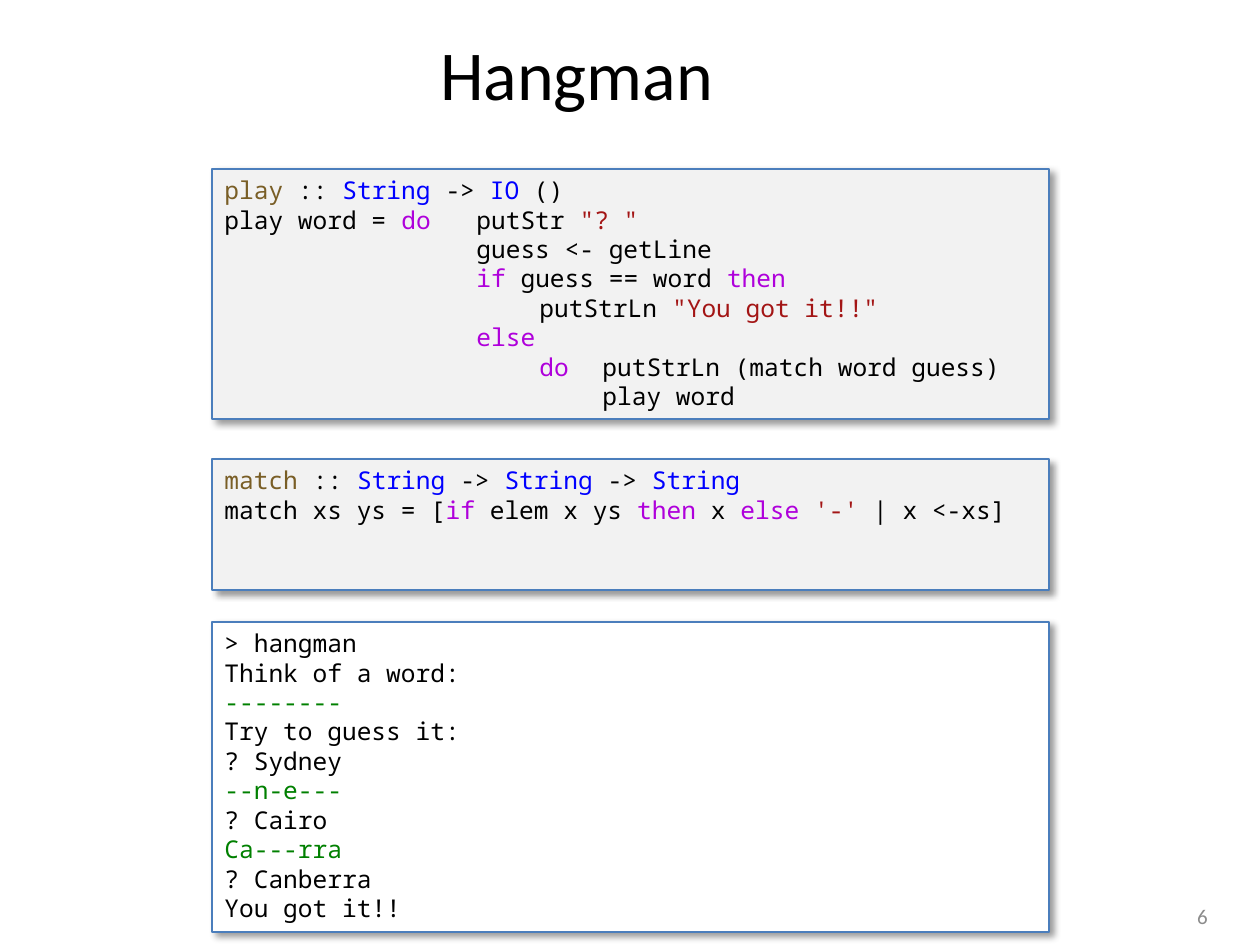
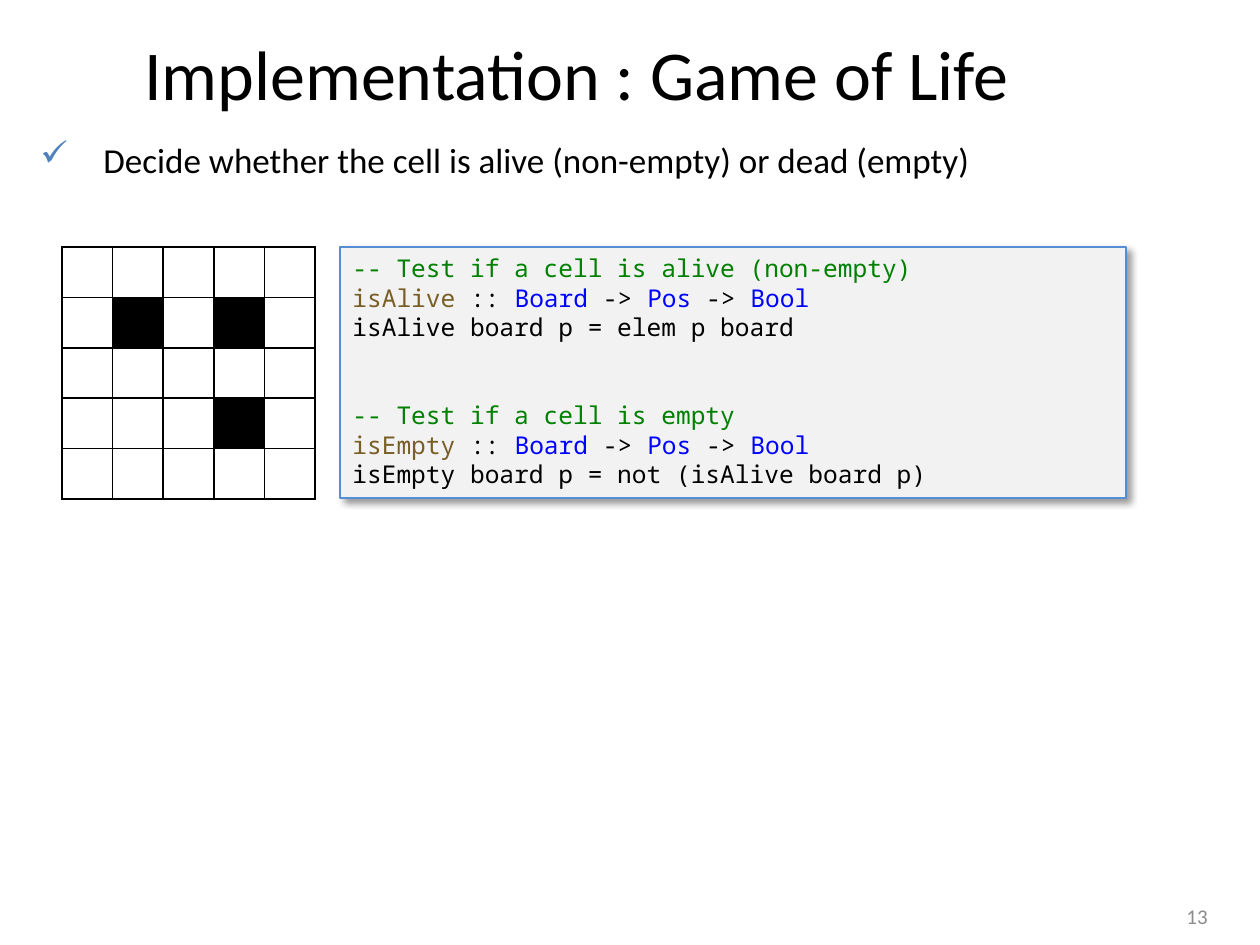
from lxml import etree
from pptx import Presentation
from pptx.dml.color import RGBColor
from pptx.enum.shapes import MSO_SHAPE
from pptx.enum.text import MSO_ANCHOR, PP_ALIGN
from pptx.oxml import parse_xml
from pptx.oxml.ns import qn
from pptx.util import Pt

RECTANGLE = MSO_SHAPE.RECTANGLE
TOP, MIDDLE = MSO_ANCHOR.TOP, MSO_ANCHOR.MIDDLE
LEFT, CENTER, RIGHT = PP_ALIGN.LEFT, PP_ALIGN.CENTER, PP_ALIGN.RIGHT
NAMESPACE = 'xmlns:a="http://schemas.openxmlformats.org/drawingml/2006/main"'

# Look shared by the slides; lengths are px, 126 to the inch
SCALE = 914400 / 126
PAGE_SIZE = (1260, 945)
TITLE_AREA = (28, 34, 1097, 77)
BODY_AREA = (28, 132, 1192, 724)
NUMBER_AREA = (926, 891, 294, 50)
TAB_STEP, TAB_COUNT = 63, 6
BULLET_INDENT = 63
TEXT_FONT, CODE_FONT = "Calibri", "Noto Sans Mono"
CODE_SIZE, CODE_LEADING = 14, 16.8
BLACK, WHITE, PANEL = "000000", "FFFFFF", "F2F2F2"
NUMBER_GREY, BULLET_BLUE = "8C8C8C", "4F81BD"
FRAME_BLUE, FRAME_LIGHT = "4B7EBC", "558ED5"

# Syntax colours
PLAIN, NAME, TYPE = BLACK, "795E26", "0000FF"
KEYWORD, STRING, GREEN = "AF00DB", "A31515", "008000"


def signature(name, *types):
    """Coloured spans of a Haskell type signature."""
    spans = [(name, NAME), (" :: ", PLAIN)]
    for index, type_name in enumerate(types):
        if index:
            spans.append((" -> ", PLAIN))
        spans.append((type_name, TYPE))
    return spans


PLAY_CODE = [
    signature("play", "String", "IO") + [(" ()", PLAIN)],
    [("play word = ", PLAIN), ("do\t", KEYWORD), ("putStr ", PLAIN), ('"? "', STRING)],
    [("\t\t\t\tguess <- getLine", PLAIN)],
    [("\t\t\t\tif", KEYWORD), (" guess == word ", PLAIN), ("then", KEYWORD)],
    [("\t\t\t\t\tputStrLn ", PLAIN), ('"You got it!!"', STRING)],
    [("\t\t\t\telse", KEYWORD)],
    [("\t\t\t\t\tdo\t", KEYWORD), ("putStrLn (match word guess)", PLAIN)],
    [("\t\t\t\t\t\tplay word", PLAIN)],
]
MATCH_CODE = [
    signature("match", "String", "String", "String"),
    [("match xs ys = [", PLAIN), ("if ", KEYWORD), ("elem x ys ", PLAIN),
     ("then", KEYWORD), (" x ", PLAIN), ("else ", KEYWORD), ("'-'", STRING),
     (" | x <-xs]", PLAIN)],
]
SESSION = [
    [("> hangman", PLAIN)],
    [("Think of a word:", PLAIN)],
    [("--------", GREEN)],
    [("Try to guess it:", PLAIN)],
    [("? Sydney", PLAIN)],
    [("--n-e---", GREEN)],
    [("? Cairo", PLAIN)],
    [("Ca---rra", GREEN)],
    [("? Canberra", PLAIN)],
    [("You got it!!", PLAIN)],
]
CELL_CODE = [
    [("-- Test if a cell is alive (non-empty)", GREEN)],
    signature("isAlive", "Board", "Pos", "Bool"),
    [("isAlive board p = elem p board", PLAIN)],
    [("-- Test if a cell is empty", GREEN)],
    signature("isEmpty", "Board", "Pos", "Bool"),
    [("isEmpty board p = not (isAlive board p)", PLAIN)],
]
SECOND_FUNCTION_LINE = 3

HANGMAN_LEFT, HANGMAN_WIDTH = 212, 837
HANGMAN_PANELS = [  # top, height, fill, lines
    (169, 250, PANEL, PLAY_CODE),
    (459, 131, PANEL, MATCH_CODE),
    (622, 310, WHITE, SESSION),
]
CELL_CODE_AREA = (340, 247, 786, 251)

CELL_RULE = "Decide whether the cell is alive (non-empty) or dead (empty)"
BOARD_AREA = (62, 247, 253, 252)
BOARD_SIZE = 5
ALIVE = {(1, 1), (1, 3), (3, 3)}  # row, column


def emu(px):
    return round(px * SCALE)


def place(area):
    return [emu(length) for length in area]


def color(value):
    return RGBColor.from_string(value)


def add_span(para, text, font, size, shade):
    span = para.add_run()
    span.text = text
    span.font.name = font
    span.font.size = Pt(size)
    span.font.color.rgb = color(shade)


def add_text(page, area, text, size, shade, align, anchor):
    box = page.shapes.add_textbox(*place(area))
    box.text_frame.word_wrap = True
    box.text_frame.vertical_anchor = anchor
    para = box.text_frame.paragraphs[0]
    para.alignment = align
    add_span(para, text, TEXT_FONT, size, shade)
    return para


def add_page(deck, title, number):
    page = deck.slides.add_slide(deck.slide_layouts[6])
    add_text(page, TITLE_AREA, title, 40, BLACK, CENTER, MIDDLE)
    add_text(page, NUMBER_AREA, number, 12, NUMBER_GREY, RIGHT, MIDDLE)
    return page


def add_bullet(para):
    properties = para._p.get_or_add_pPr()
    properties.set("marL", str(emu(BULLET_INDENT)))
    properties.set("indent", str(-emu(BULLET_INDENT)))
    bullet_color = etree.SubElement(properties, qn("a:buClr"))
    etree.SubElement(bullet_color, qn("a:srgbClr"), val=BULLET_BLUE)
    etree.SubElement(properties, qn("a:buChar"), char="✓")


def add_tabs(para):
    tabs = etree.SubElement(para._p.get_or_add_pPr(), qn("a:tabLst"))
    for stop in range(1, TAB_COUNT + 1):
        etree.SubElement(tabs, qn("a:tab"), pos=str(emu(stop * TAB_STEP)), algn="l")


def add_shadow(shape):
    shape._element.spPr.append(parse_xml(
        f'<a:effectLst {NAMESPACE}><a:outerShdw blurRad="{Pt(4)}" dist="{Pt(3)}" '
        'dir="2700000" algn="tl" rotWithShape="0"><a:srgbClr val="000000">'
        '<a:alpha val="40000"/></a:srgbClr></a:outerShdw></a:effectLst>'))


def add_code_panel(page, area, fill, frame_color, lines):
    """Draw a framed panel of code and return its paragraphs."""
    panel = page.shapes.add_shape(RECTANGLE, *place(area))
    panel.fill.solid()
    panel.fill.fore_color.rgb = color(fill)
    panel.line.color.rgb = color(frame_color)
    panel.line.width = Pt(0.75)
    add_shadow(panel)
    frame = panel.text_frame
    frame.word_wrap = True
    frame.vertical_anchor = TOP
    for index, line in enumerate(lines):
        para = frame.add_paragraph() if index else frame.paragraphs[0]
        add_tabs(para)
        para.alignment = LEFT
        para.line_spacing = Pt(CODE_LEADING)
        for text, shade in line:
            add_span(para, text, CODE_FONT, CODE_SIZE, shade)
    return frame.paragraphs


def add_borders(cell):
    properties = cell._tc.get_or_add_tcPr()
    for side in ("lnL", "lnR", "lnT", "lnB"):
        properties.append(parse_xml(
            f'<a:{side} {NAMESPACE} w="{Pt(1)}"><a:solidFill>'
            f'<a:srgbClr val="{BLACK}"/></a:solidFill></a:{side}>'))


def add_board(page):
    left, top, width, height = place(BOARD_AREA)
    board = page.shapes.add_table(
        BOARD_SIZE, BOARD_SIZE, left, top, width, height).table
    board.first_row = board.horz_banding = False
    for row in range(BOARD_SIZE):
        for column in range(BOARD_SIZE):
            cell = board.cell(row, column)
            cell.margin_top = cell.margin_bottom = 0
            add_borders(cell)
            cell.fill.solid()
            cell.fill.fore_color.rgb = color(BLACK if (row, column) in ALIVE else WHITE)


def build_hangman(deck):
    page = add_page(deck, "Hangman", "6")
    for top, height, fill, lines in HANGMAN_PANELS:
        area = (HANGMAN_LEFT, top, HANGMAN_WIDTH, height)
        add_code_panel(page, area, fill, FRAME_BLUE, lines)


def build_game_of_life(deck):
    page = add_page(deck, "Implementation : Game of Life", "13")
    add_bullet(add_text(page, BODY_AREA, CELL_RULE, 20, BLACK, LEFT, TOP))
    paras = add_code_panel(page, CELL_CODE_AREA, PANEL, FRAME_LIGHT, CELL_CODE)
    paras[SECOND_FUNCTION_LINE].space_before = Pt(2 * CODE_LEADING)
    add_board(page)


def main():
    deck = Presentation()
    deck.slide_width, deck.slide_height = place(PAGE_SIZE)
    build_hangman(deck)
    build_game_of_life(deck)
    deck.save("out.pptx")


if __name__ == "__main__":
    main()
